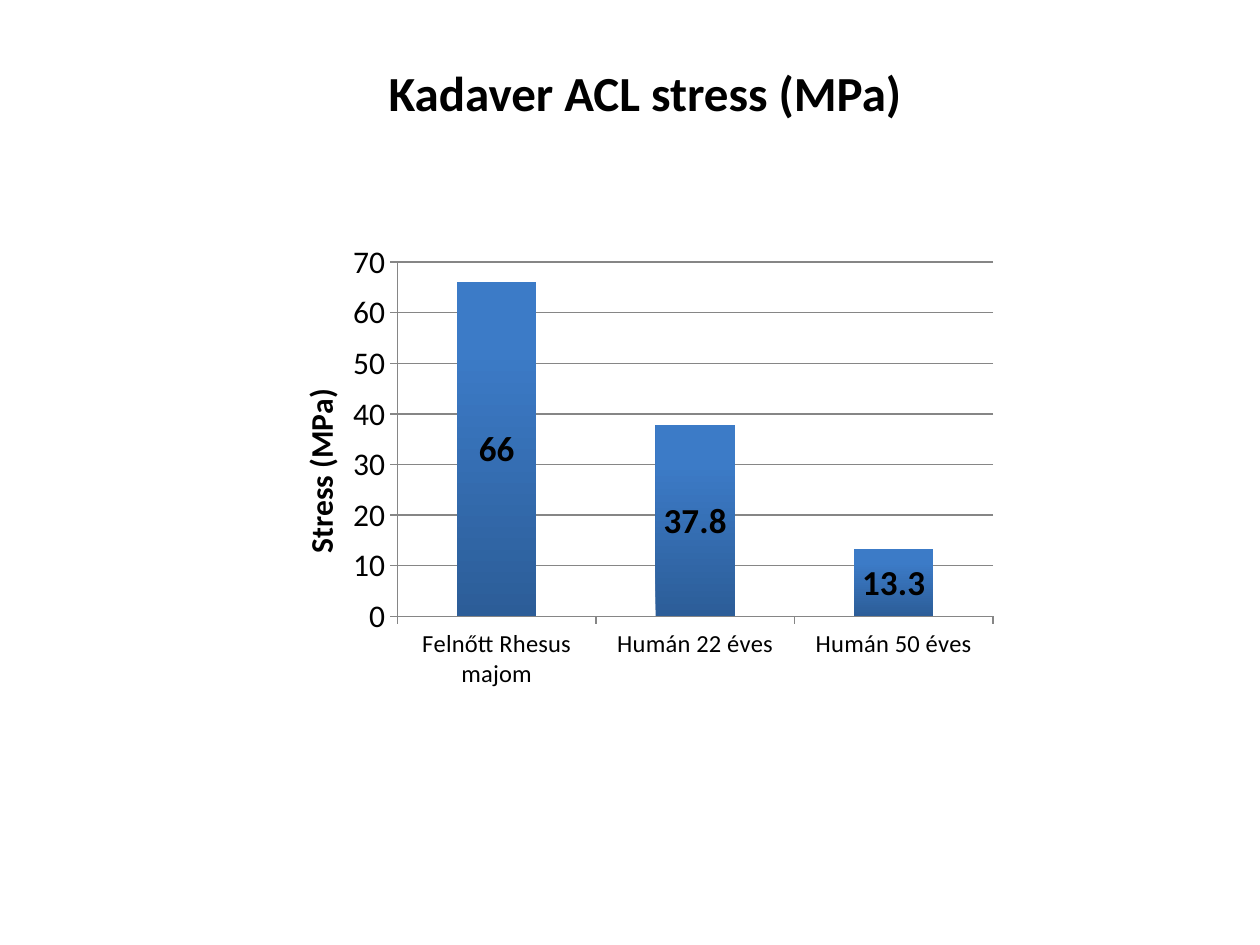
import pptx
import pptx.chart.data
import pptx.dml.color
import pptx.enum.chart
import pptx.enum.text
import pptx.oxml
import pptx.oxml.ns
import pptx.util
from pptx.util import Cm, Pt

BLACK = pptx.dml.color.RGBColor(0x00, 0x00, 0x00)
GREY = pptx.dml.color.RGBColor(0x86, 0x86, 0x86)
DARK_BLUE = pptx.dml.color.RGBColor(0x2C, 0x5D, 0x98)
LIGHT_BLUE = pptx.dml.color.RGBColor(0x3C, 0x7B, 0xC7)
FONT = "Calibri"


def set_layout(parent, **settings):
    """Place a chart part by fractions of the chart area."""
    layout = parent.find(pptx.oxml.ns.qn("c:layout"))
    if layout is None:
        layout = pptx.oxml.parse_xml(f"<c:layout {pptx.oxml.ns.nsdecls('c')}/>")
        parent.insert(0, layout)
    manual = layout.makeelement(pptx.oxml.ns.qn("c:manualLayout"), {})
    layout.append(manual)
    for tag, value in settings.items():
        child = manual.makeelement(pptx.oxml.ns.qn(f"c:{tag}"), {"val": str(value)})
        manual.append(child)


def set_font(font, size, bold=False):
    font.name = FONT
    font.size = Pt(size)
    font.bold = bold
    font.color.rgb = BLACK


deck = pptx.Presentation()
deck.slide_width = Cm(25.4)
deck.slide_height = Cm(19.05)
slide = deck.slides.add_slide(deck.slide_layouts[5])

# Title
heading = slide.shapes.title
heading.left, heading.top = Cm(1.9), Cm(1.12)
heading.width, heading.height = Cm(22.2), Cm(1.45)
heading.text_frame.text = "Kadaver ACL stress (MPa)"
heading_line = heading.text_frame.paragraphs[0]
heading_line.alignment = pptx.enum.text.PP_ALIGN.CENTER
set_font(heading_line.font, 28, bold=True)

# Stress chart
stress_data = pptx.chart.data.CategoryChartData()
stress_data.categories = ["Felnőtt Rhesus majom", "Humán 22 éves", "Humán 50 éves"]
stress_data.add_series("Series 1", [66, 37.8, 13.3])
stress_chart = slide.shapes.add_chart(
    pptx.enum.chart.XL_CHART_TYPE.COLUMN_CLUSTERED,
    Cm(5.31), Cm(4.72), Cm(15.01), Cm(9.4), stress_data,
).chart
stress_chart.has_legend = False
stress_chart.has_title = False
set_font(stress_chart.font, 10)
set_layout(stress_chart._chartSpace.chart.plotArea, layoutTarget="inner",
           xMode="edge", yMode="edge", x=0.18, y=0.06, w=0.8, h=0.76)

# Columns and their values
columns = stress_chart.plots[0]
columns.gap_width = 150
columns.vary_by_categories = False
column_fill = columns.series[0].format.fill
column_fill.gradient()
column_fill.gradient_angle = 90
for stop, color, position in zip(
        column_fill.gradient_stops, (DARK_BLUE, LIGHT_BLUE), (0, 0.8)):
    stop.color.rgb = color
    stop.position = position
values = columns.series[0].data_labels
values.show_value = True
values.position = pptx.enum.chart.XL_LABEL_POSITION.CENTER
set_font(values.font, 20, bold=True)

# Axes
subject_axis, stress_axis = stress_chart.category_axis, stress_chart.value_axis
for axis, size in ((subject_axis, 14), (stress_axis, 18)):
    axis.major_tick_mark = pptx.enum.chart.XL_TICK_MARK.OUTSIDE
    axis.minor_tick_mark = pptx.enum.chart.XL_TICK_MARK.NONE
    axis.format.line.color.rgb = GREY
    axis.format.line.width = Pt(0.75)
    set_font(axis.tick_labels.font, size)
stress_axis.minimum_scale = 0
stress_axis.maximum_scale = 70
stress_axis.major_unit = 10
stress_axis.has_major_gridlines = True
stress_axis.major_gridlines.format.line.color.rgb = GREY
stress_axis.major_gridlines.format.line.width = Pt(0.75)

# Stress axis title
axis_title = stress_axis.axis_title
axis_title.text_frame.text = "Stress (MPa)"
set_font(axis_title.text_frame.paragraphs[0].font, 18, bold=True)
axis_title.text_frame._txBody.bodyPr.set("rot", "-5400000")
axis_title.text_frame._txBody.bodyPr.set("vert", "horz")
set_layout(axis_title._element, xMode="edge", yMode="edge", x=0.04, y=0.32)

deck.save("out.pptx")
